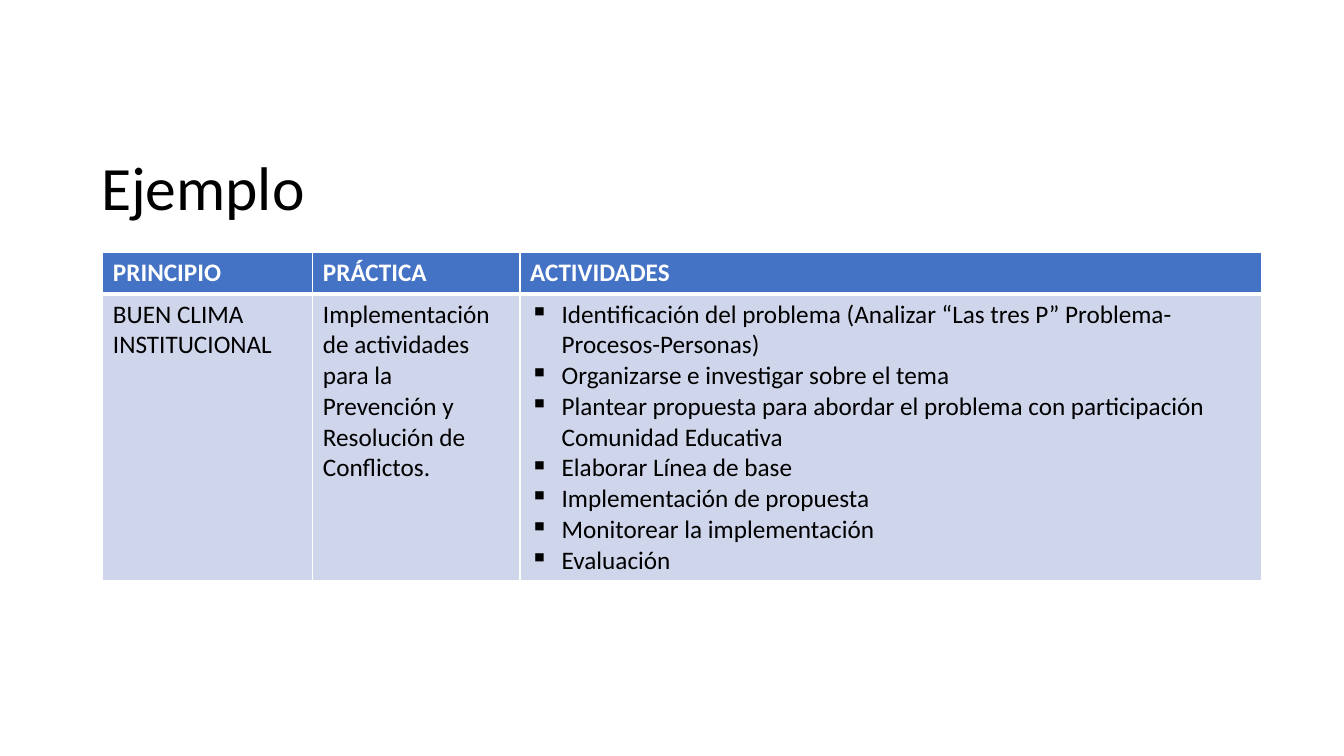
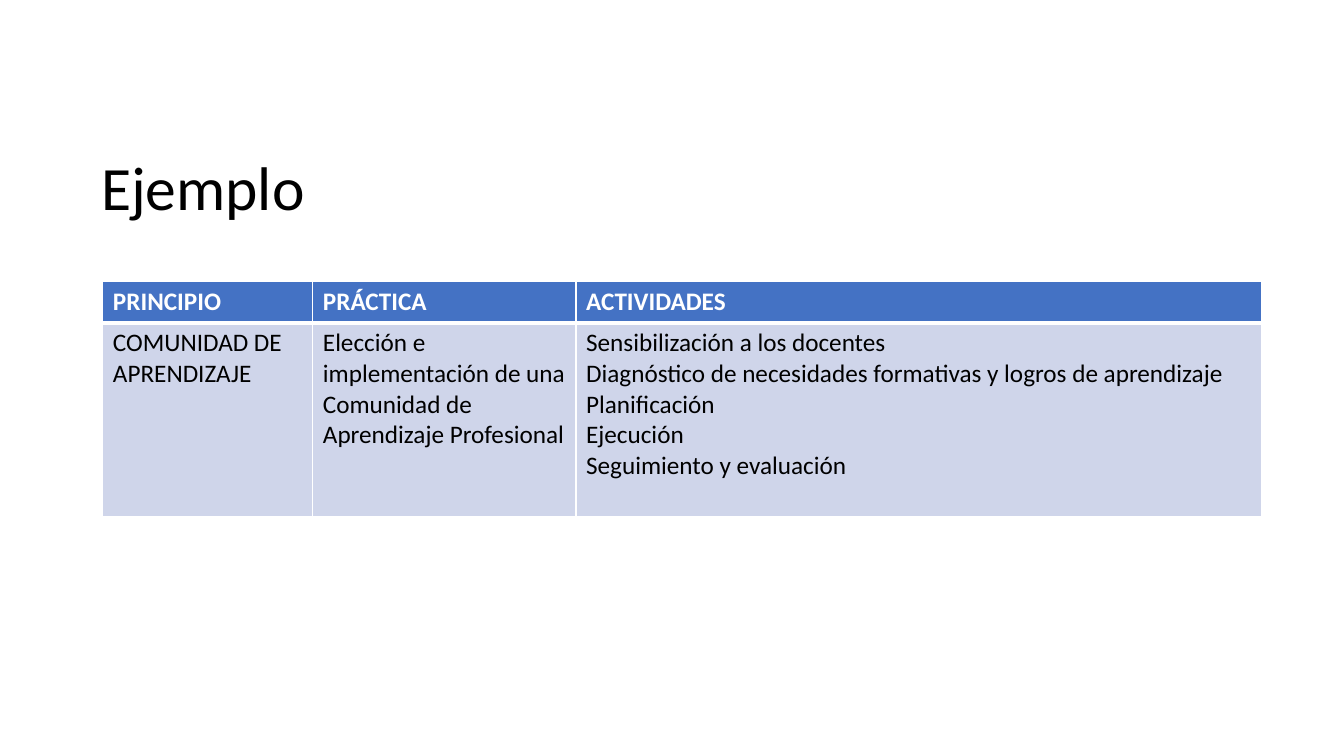
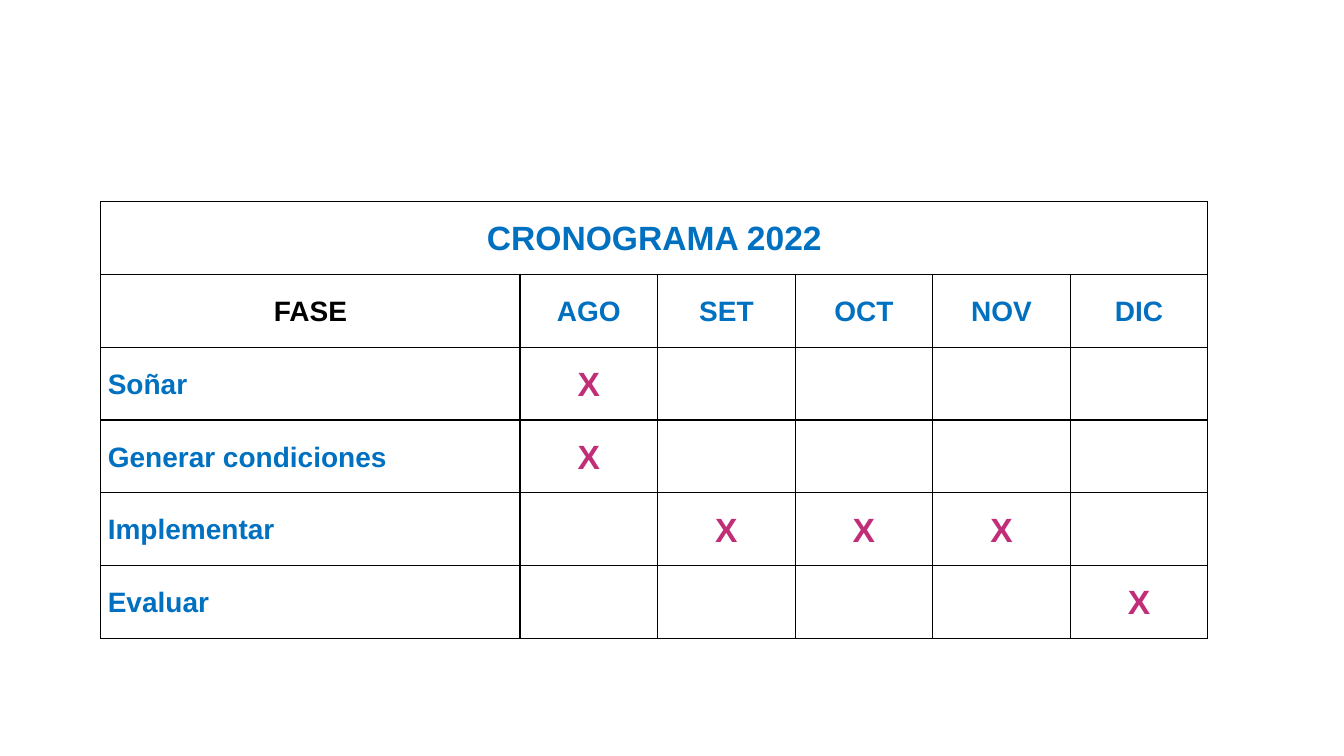
import dataclasses

import lxml.etree
import pptx
import pptx.dml.color
import pptx.enum.text
import pptx.oxml.ns
import pptx.util

Pt = pptx.util.Pt
ALIGN = pptx.enum.text.PP_ALIGN
ANCHOR = pptx.enum.text.MSO_ANCHOR


@dataclasses.dataclass(frozen=True)
class Theme:
    black: str = "000000"
    white: str = "FFFFFF"
    header_fill: str = "4472C4"
    body_fill: str = "CFD5EA"
    blue: str = "0070C0"
    magenta: str = "C12D77"
    body_font: str = "Calibri"
    schedule_font: str = "Arial"
    title_size: int = 44
    body_size: int = 18
    label_size: int = 20
    mark_size: int = 24
    line_spacing: float = 1.07


THEME = Theme()
TITLE_BOX = (65, 83.5, 828, 104.5)
HEADINGS = ["PRINCIPIO", "PRÁCTICA", "ACTIVIDADES"]
MONTHS = ["AGO", "SET", "OCT", "NOV", "DIC"]
PHASES = {
    "Soñar": ["AGO"],
    "Generar condiciones": ["AGO"],
    "Implementar": ["SET", "OCT", "NOV"],
    "Evaluar": ["DIC"],
}


def apply_format(target, values):
    for name, value in values.items():
        setattr(target, name, value)


def write_paragraph(paragraph, text, font, size, color, bold=False):
    run = paragraph.add_run()
    run.text = text
    apply_format(run.font, {"name": font, "size": Pt(size), "bold": bold})
    run.font.color.rgb = pptx.dml.color.RGBColor.from_string(color)


def add_bullet(paragraph, indent=22.5):
    properties = paragraph._p.get_or_add_pPr()
    properties.set("marL", str(Pt(indent)))
    properties.set("indent", str(-Pt(indent)))
    bullet = lxml.etree.SubElement(properties, pptx.oxml.ns.qn("a:buChar"))
    bullet.set("char", "▪")


def style_cell(cell, fill, border, top=1, bottom=1):
    cell.fill.solid()
    cell.fill.fore_color.rgb = pptx.dml.color.RGBColor.from_string(fill)
    # Border lines come before the fill in the cell properties
    properties = cell._tc.get_or_add_tcPr()
    widths = {"a:lnL": 1, "a:lnR": 1, "a:lnT": top, "a:lnB": bottom}
    for position, (tag, width) in enumerate(widths.items()):
        line = lxml.etree.Element(pptx.oxml.ns.qn(tag), w=str(Pt(width)))
        solid = lxml.etree.SubElement(line, pptx.oxml.ns.qn("a:solidFill"))
        lxml.etree.SubElement(solid, pptx.oxml.ns.qn("a:srgbClr"), val=border)
        properties.insert(position, line)


def add_grid(slide, left, top, widths, heights):
    frame = slide.shapes.add_table(
        len(heights), len(widths), Pt(left), Pt(top), Pt(sum(widths)), Pt(sum(heights)))
    table = frame.table
    apply_format(table, {"first_row": False, "horz_banding": False})
    for column, width in zip(table.columns, widths):
        column.width = Pt(width)
    for row, height in zip(table.rows, heights):
        row.height = Pt(height)
    return table


def place_title(slide, text, box):
    title = slide.shapes.title
    apply_format(title, dict(zip(("left", "top", "width", "height"), map(Pt, box))))
    apply_format(title.text_frame, {
        "word_wrap": True,
        "vertical_anchor": ANCHOR.MIDDLE,
        "auto_size": pptx.enum.text.MSO_AUTO_SIZE.NONE,
    })
    paragraph = title.text_frame.paragraphs[0]
    apply_format(paragraph, {"alignment": ALIGN.LEFT, "line_spacing": 0.9})
    write_paragraph(paragraph, text, THEME.body_font, THEME.title_size, THEME.black)


def add_example_slide(presentation, top, widths, body_height, contents, bulleted=False):
    slide = presentation.slides.add_slide(presentation.slide_layouts[5])
    place_title(slide, "Ejemplo", TITLE_BOX)
    table = add_grid(slide, 73.5, top, widths, [29.5, body_height])

    for column, (heading, lines) in enumerate(zip(HEADINGS, contents)):
        # Header cell, with a thick rule below it
        header = table.cell(0, column)
        style_cell(header, THEME.header_fill, THEME.white, bottom=3)
        write_paragraph(header.text_frame.paragraphs[0], heading, THEME.body_font,
                        THEME.body_size, THEME.white, bold=True)

        # Body cell, one paragraph per line
        body = table.cell(1, column)
        style_cell(body, THEME.body_fill, THEME.white, top=3)
        for index, text in enumerate(lines):
            frame = body.text_frame
            paragraph = frame.add_paragraph() if index else frame.paragraphs[0]
            if bulleted and column == len(HEADINGS) - 1:
                add_bullet(paragraph)
            write_paragraph(paragraph, text, THEME.body_font, THEME.body_size, THEME.black)


def write_schedule_cell(cell, text, size, color, alignment=ALIGN.CENTER):
    paragraph = cell.text_frame.paragraphs[0]
    apply_format(paragraph, {"alignment": alignment, "line_spacing": THEME.line_spacing})
    write_paragraph(paragraph, text, THEME.schedule_font, size, color, bold=True)


def add_schedule_slide(presentation):
    slide = presentation.slides.add_slide(presentation.slide_layouts[6])
    widths = [299.5] + [98.25] * len(MONTHS)
    table = add_grid(slide, 72, 144, widths, [52] * (len(PHASES) + 2))
    for cell in table.iter_cells():
        style_cell(cell, THEME.white, THEME.black)
        apply_format(cell, {
            "vertical_anchor": ANCHOR.MIDDLE, "margin_left": Pt(5), "margin_right": Pt(5),
            "margin_top": 0, "margin_bottom": 0,
        })

    # Heading across all columns
    table.cell(0, 0).merge(table.cell(0, len(MONTHS)))
    write_schedule_cell(table.cell(0, 0), "CRONOGRAMA 2022", THEME.mark_size, THEME.blue)

    # Column labels
    write_schedule_cell(table.cell(1, 0), "FASE", THEME.label_size, THEME.black)
    for column, month in enumerate(MONTHS, 1):
        write_schedule_cell(table.cell(1, column), month, THEME.label_size, THEME.blue)

    # Phases and their months
    for row, (phase, months) in enumerate(PHASES.items(), 2):
        write_schedule_cell(table.cell(row, 0), phase, THEME.label_size, THEME.blue, ALIGN.LEFT)
        for month in months:
            cell = table.cell(row, MONTHS.index(month) + 1)
            write_schedule_cell(cell, "X", THEME.mark_size, THEME.magenta)


def main():
    presentation = pptx.Presentation()
    apply_format(presentation, {"slide_width": Pt(960), "slide_height": Pt(540)})
    add_example_slide(presentation, 180.5, [150, 148, 530], 205, [
        ["BUEN CLIMA INSTITUCIONAL"],
        ["Implementación de actividades para la Prevención y Resolución de Conflictos."],
        [
            "Identificación del problema (Analizar “Las tres P” Problema-Procesos-Personas)",
            "Organizarse e investigar sobre el tema",
            "Plantear propuesta para abordar el problema con participación Comunidad Educativa",
            "Elaborar Línea de base",
            "Implementación de propuesta",
            "Monitorear la implementación",
            "Evaluación",
        ],
    ], bulleted=True)
    add_example_slide(presentation, 201, [150, 188, 490], 138.5, [
        ["COMUNIDAD DE APRENDIZAJE"],
        ["Elección e implementación de una Comunidad de Aprendizaje Profesional"],
        [
            "Sensibilización a los docentes",
            "Diagnóstico de necesidades formativas y logros de aprendizaje",
            "Planificación",
            "Ejecución",
            "Seguimiento y evaluación",
        ],
    ])
    add_schedule_slide(presentation)
    presentation.save("out.pptx")


if __name__ == "__main__":
    main()
